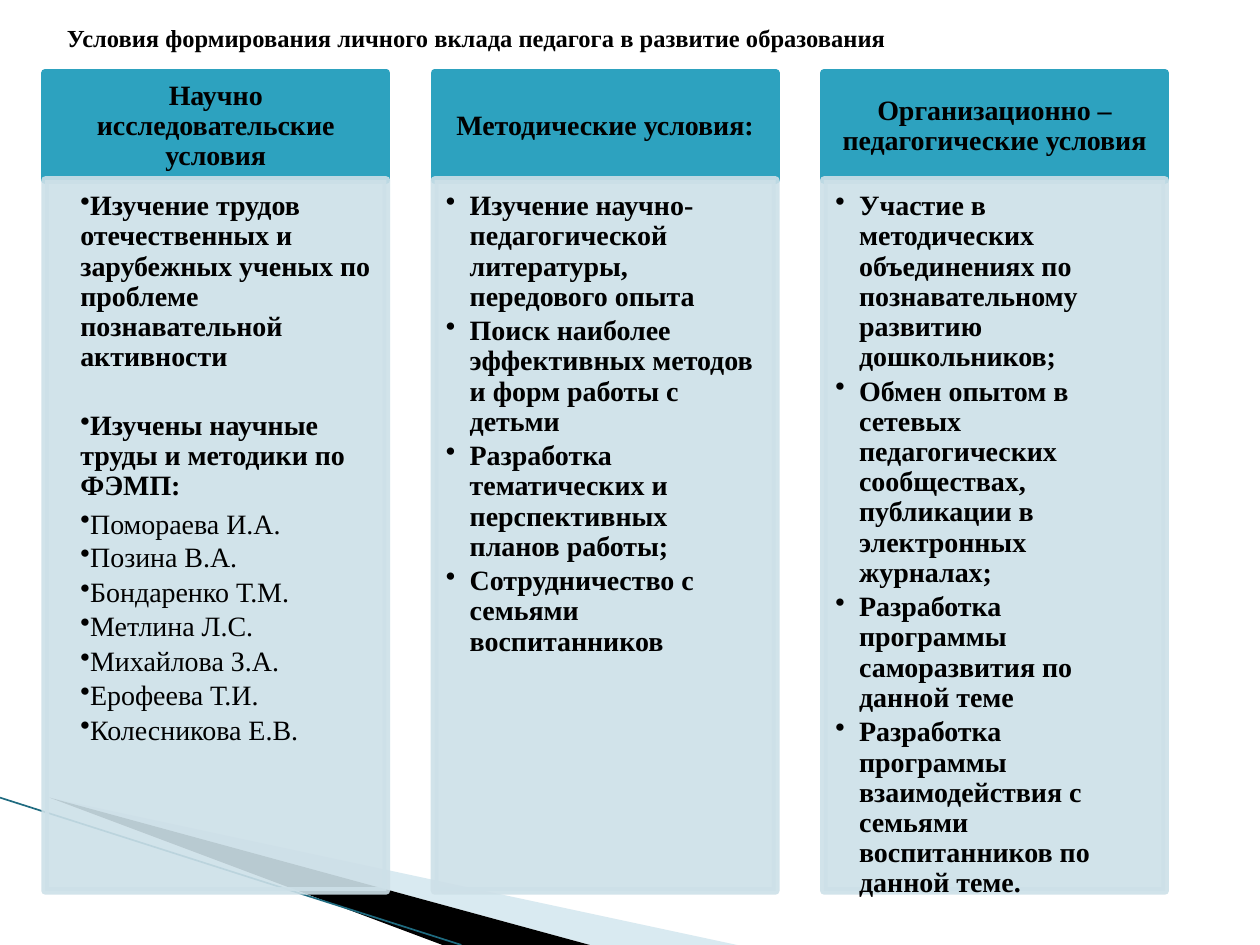
import pptx
import pptx.dml.color
import pptx.enum.shapes
import pptx.enum.text
import pptx.oxml.ns
import pptx.util
from lxml import etree

Cm, Pt = pptx.util.Cm, pptx.util.Pt
PP_ALIGN = pptx.enum.text.PP_ALIGN
ANCHOR = pptx.enum.text.MSO_ANCHOR
qn = pptx.oxml.ns.qn

FONT = "Times New Roman"
COLOURS = {
    "text": "000000",
    "header": "2DA2BF",
    "panel": "CDE0E8",
    "light_wedge": "A0CBDC",
    "dark_wedge": "000000",
    "edge": "1F6B80",
}
AUTHORS = [
    "Помораева И.А.", "Позина В.А.", "Бондаренко Т.М.", "Метлина Л.С.",
    "Михайлова З.А.", "Ерофеева Т.И.", "Колесникова Е.В.",
]
RESEARCH = [
    "Изучение трудов отечественных и зарубежных ученых по проблеме познавательной активности",
    "Изучены научные труды и методики по ФЭМП:",
]
METHODS = [
    "Изучение научно-педагогической литературы, передового опыта",
    "Поиск наиболее эффективных методов и форм работы с детьми",
    "Разработка тематических и перспективных планов работы;",
    "Сотрудничество с семьями воспитанников",
]
ORGANISATION = [
    "Участие в методических объединениях по познавательному развитию дошкольников;",
    "Обмен опытом в сетевых педагогических сообществах, публикации в электронных журналах;",
    "Разработка программы саморазвития по данной теме",
    "Разработка программы взаимодействия с семьями воспитанников по данной теме.",
]


def rgb(name):
    return pptx.dml.color.RGBColor.from_string(COLOURS[name])


def paint(part, colour, opacity=100, line_width=None):
    """Fill a shape, outline it in the same colour or not at all."""
    part.shadow.inherit = False
    part.fill.solid()
    part.fill.fore_color.rgb = rgb(colour)
    if line_width:
        part.line.color.rgb = rgb(colour)
        part.line.width = Pt(line_width)
    else:
        part.line.fill.background()
    if opacity < 100:
        for tint in part._element.spPr.iter(qn("a:srgbClr")):
            etree.SubElement(tint, qn("a:alpha"), val=str(opacity * 1000))


def write(paragraph, text, size=16, bold=True):
    run = paragraph.add_run()
    run.text = text
    run.font.name = FONT
    run.font.size = Pt(size)
    run.font.bold = bold
    run.font.color.rgb = rgb("text")


def set_frame(frame, anchor, left, top, right, bottom):
    frame.word_wrap = True
    frame.auto_size = pptx.enum.text.MSO_AUTO_SIZE.NONE
    frame.vertical_anchor = anchor
    frame.margin_left, frame.margin_top = Cm(left), Cm(top)
    frame.margin_right, frame.margin_bottom = Cm(right), Cm(bottom)


def add_bullet(paragraph, hanging):
    properties = paragraph._p.get_or_add_pPr()
    indent = Cm(0.48)
    properties.set("marL", str(indent))
    properties.set("indent", str(-indent if hanging else 0))
    etree.SubElement(properties, qn("a:buChar"), char="•")


def add_title(slide, left, top, width, height):
    title = slide.shapes.title
    title.left, title.top, title.width, title.height = left, top, width, height
    set_frame(title.text_frame, ANCHOR.TOP, 0.25, 0.13, 0.25, 0.13)
    heading = title.text_frame.paragraphs[0]
    heading.alignment = PP_ALIGN.CENTER
    write(heading, "Условия формирования личного вклада педагога в развитие образования", size=14)


def add_corner(slide, left, top):
    """Draw the wedges and the thin edge running to the bottom of the slide."""
    wedges = [
        ("light_wedge", 40, [(1.4, 0.43), (15.11, 2.97), (11.58, 2.97)]),
        ("dark_wedge", 100, [(1.35, 0.4), (11.5, 2.97), (9.3, 2.97)]),
    ]
    for colour, opacity, points in wedges:
        builder = slide.shapes.build_freeform(*points[0], scale=Cm(1))
        builder.add_line_segments(points[1:], close=True)
        paint(builder.convert_to_shape(left, top), colour, opacity)
    edge = slide.shapes.add_connector(
        pptx.enum.shapes.MSO_CONNECTOR.STRAIGHT,
        left, top, left + Cm(9.3), top + Cm(2.97))
    edge.line.color.rgb = rgb("edge")
    edge.line.width = Pt(0.95)
    etree.SubElement(edge._element.spPr, qn("a:effectLst"))


def add_column(slide, left, top, width, height, heading, items, authors=()):
    header_height = Cm(2.16)
    rectangle = pptx.enum.shapes.MSO_SHAPE.RECTANGLE

    header = slide.shapes.add_shape(rectangle, left, top, width, header_height)
    paint(header, "header", line_width=4.33)
    set_frame(header.text_frame, ANCHOR.MIDDLE, 0.3, 0.18, 0.3, 0.18)
    caption = header.text_frame.paragraphs[0]
    caption.alignment = PP_ALIGN.CENTER
    caption.line_spacing = 0.9
    write(caption, heading)

    panel = slide.shapes.add_shape(
        rectangle, left, top + header_height, width, height - header_height)
    paint(panel, "panel", 90, line_width=4.33)
    frame = panel.text_frame
    set_frame(frame, ANCHOR.TOP, 0.23, 0.23, 0.3, 0.36)
    for number, text in enumerate([*items, *authors]):
        entry = frame.add_paragraph() if number else frame.paragraphs[0]
        entry.level = 1
        entry.alignment = PP_ALIGN.LEFT
        first_author = bool(authors) and number == len(items)
        entry.line_spacing = 1.0 if first_author else 0.9
        entry.space_after = Pt(22 if authors and number == 0 else 2.4)
        add_bullet(entry, hanging=not authors)
        write(entry, text, bold=number < len(items))


def main():
    deck = pptx.Presentation()
    deck.slide_width, deck.slide_height = Cm(25.4), Cm(19.05)
    slide = deck.slides.add_slide(deck.slide_layouts.get_by_name("Title Only"))

    add_corner(slide, Cm(0), Cm(16.08))
    columns = [
        ("Научно исследовательские условия", RESEARCH, AUTHORS),
        ("Методические условия:", METHODS, ()),
        ("Организационно –педагогические условия", ORGANISATION, ()),
    ]
    for number, (heading, items, authors) in enumerate(columns):
        add_column(slide, Cm(0.91 + 7.85 * number), Cm(1.47), Cm(6.88), Cm(16.49),
                   heading, items, authors)
    add_title(slide, Cm(0.51), Cm(0.33), Cm(18.19), Cm(1.19))
    deck.save("out.pptx")


if __name__ == "__main__":
    main()
